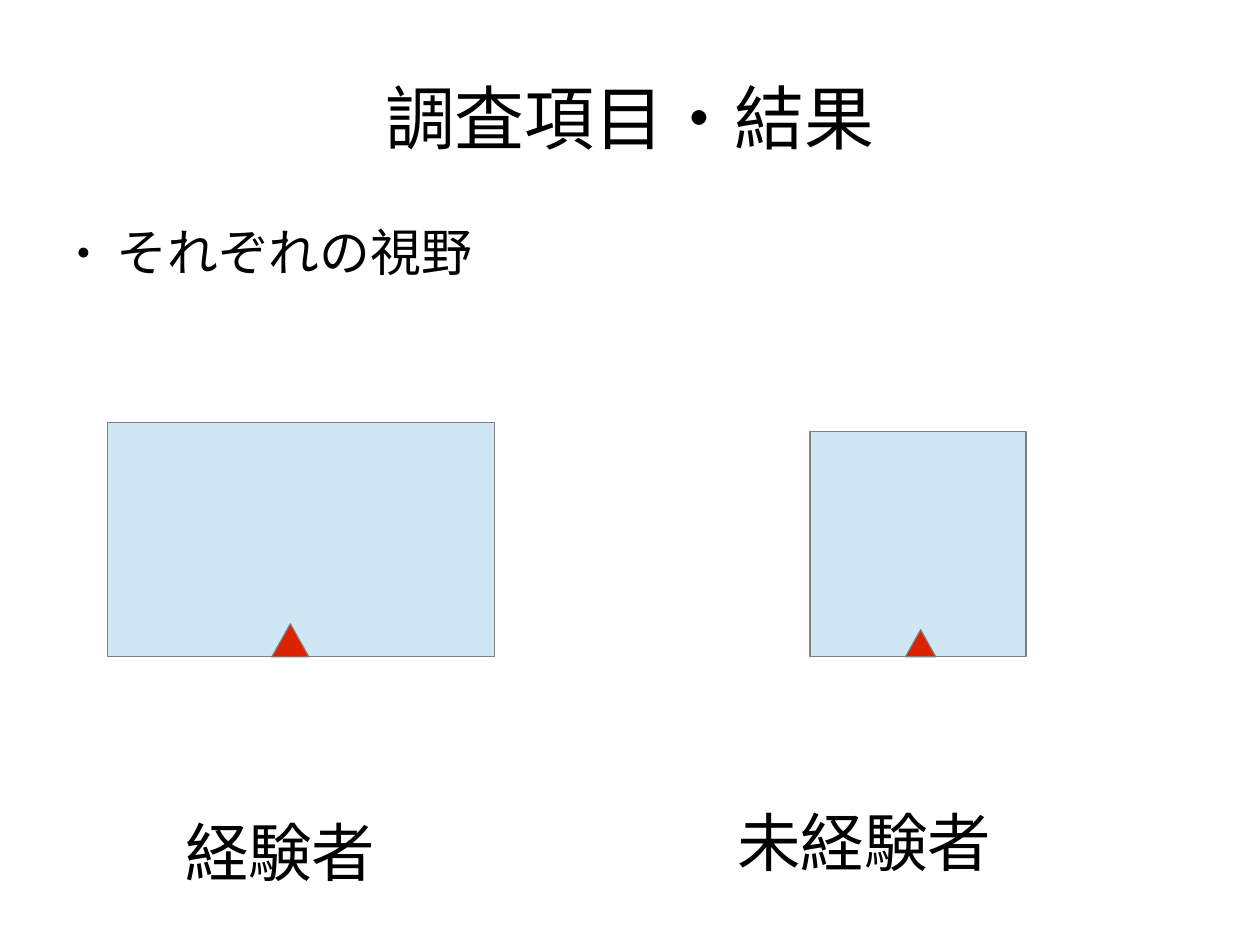
import dataclasses

import lxml.etree
import pptx
import pptx.dml.color
import pptx.enum.shapes
import pptx.enum.text
import pptx.oxml.ns
import pptx.util

Pt = pptx.util.Pt
Kind = pptx.enum.shapes.MSO_SHAPE
Align = pptx.enum.text.PP_ALIGN
Anchor = pptx.enum.text.MSO_ANCHOR
FONT = "Arial"


@dataclasses.dataclass
class Box:
    left: float
    top: float
    width: float
    height: float


@dataclasses.dataclass
class View:
    field: Box
    mark: Box
    name: str
    label: Box


VIEWS = [
    View(Box(67.7, 266.2, 243.9, 147.4), Box(171.2, 392.9, 23.4, 20.9),
         "経験者", Box(109.6, 515.9, 133.9, 40.3)),
    View(Box(510.2, 271.9, 136.1, 141.7), Box(570.4, 396.7, 19.1, 17),
         "未経験者", Box(453.6, 509.5, 181.4, 40.3)),
]


def color(code: str) -> pptx.dml.color.RGBColor:
    return pptx.dml.color.RGBColor.from_string(code)


def attach(parent, tag: str, key: str, value: str) -> None:
    lxml.etree.SubElement(parent, pptx.oxml.ns.qn(tag)).set(key, value)


def place(shape, box: Box) -> None:
    shape.left, shape.top = Pt(box.left), Pt(box.top)
    shape.width, shape.height = Pt(box.width), Pt(box.height)


def write(shape, text: str, *, size: float, align=Align.CENTER,
          anchor=Anchor.MIDDLE, after: float = 0):
    frame = shape.text_frame
    frame.word_wrap = True
    frame.auto_size = pptx.enum.text.MSO_AUTO_SIZE.NONE
    frame.vertical_anchor = anchor
    frame.margin_left = frame.margin_right = Pt(0)
    frame.margin_top = frame.margin_bottom = Pt(0)
    para = frame.paragraphs[0]
    para.alignment = align
    para.space_before, para.space_after = Pt(0), Pt(after)
    run = para.add_run()
    run.text = text
    run.font.name, run.font.size = FONT, Pt(size)
    run.font.color.rgb = color("000000")
    # East Asian text takes its font from its own element
    attach(run._r.get_or_add_rPr(), "a:ea", "typeface", FONT)
    return para


def bullet(para, char: str, scale: int, left: float, hang: float) -> None:
    props = para._p.get_or_add_pPr()
    props.set("marL", str(Pt(left)))
    props.set("indent", str(-Pt(hang)))
    attach(props, "a:buSzPct", "val", str(scale * 1000))
    attach(props, "a:buFont", "typeface", FONT)
    attach(props, "a:buChar", "char", char)


def draw(slide, kind: Kind, box: Box, fill: str) -> None:
    shape = slide.shapes.add_shape(kind, Pt(box.left), Pt(box.top),
                                   Pt(box.width), Pt(box.height))
    shape.shadow.inherit = False
    shape.fill.solid()
    shape.fill.fore_color.rgb = color(fill)
    shape.line.color.rgb = color("808080")
    shape.line.width = Pt(0)


def main() -> None:
    deck = pptx.Presentation()
    deck.slide_width, deck.slide_height = Pt(793.7), Pt(595.28)
    slide = deck.slides.add_slide(deck.slide_layouts[1])

    # Title and list
    title, body = slide.placeholders
    place(title, Box(39.6, 23.8, 714.2, 99.4))
    write(title, "調査項目・結果", size=44)
    place(body, Box(39.6, 139, 714.2, 393.1))
    item = write(body, "それぞれの視野", size=32, align=Align.LEFT,
                 anchor=Anchor.TOP, after=14.2)
    bullet(item, "●", 45, 33.8, 25.2)

    # Field of view of each group, with the viewer's position
    for view in VIEWS:
        draw(slide, Kind.RECTANGLE, view.field, "CFE7F5")
        draw(slide, Kind.ISOSCELES_TRIANGLE, view.mark, "DC2300")
        label = slide.shapes.add_textbox(0, 0, 0, 0)
        place(label, view.label)
        write(label, view.name, size=40)

    deck.save("out.pptx")


if __name__ == "__main__":
    main()
